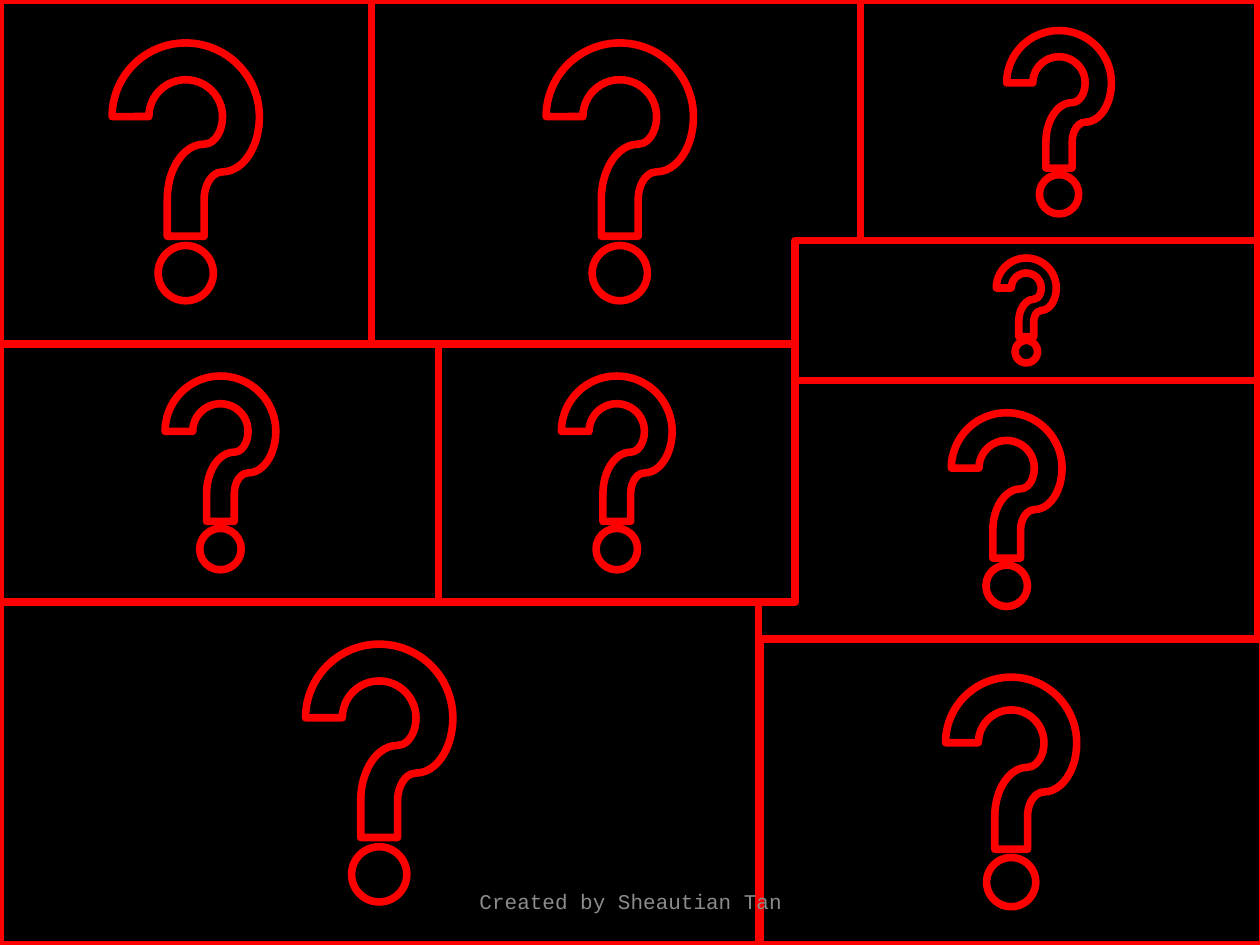
import dataclasses

import pptx
import pptx.dml.color
import pptx.enum.shapes
import pptx.enum.text
import pptx.util

Cm = pptx.util.Cm
RGB = pptx.dml.color.RGBColor


@dataclasses.dataclass(frozen=True)
class Theme:
    panel: RGB = RGB(0, 0, 0)
    outline: RGB = RGB(255, 0, 0)
    credit: RGB = RGB(0x8C, 0x8C, 0x8C)
    font: str = "Courier New"
    credit_size: float = 12
    outline_width: float = 4.33


class SlideBuilder:
    """Draw themed elements on the current slide, measured in centimetres."""

    def __init__(self, theme, slide):
        self.theme = theme
        self.slide = slide

    def question_tile(self, left, top, width, height):
        sp = self.slide.shapes.add_shape(
            pptx.enum.shapes.MSO_SHAPE.ACTION_BUTTON_HELP,
            Cm(left), Cm(top), Cm(width), Cm(height))
        sp.shadow.inherit = False
        sp.fill.solid()
        sp.fill.fore_color.rgb = self.theme.panel
        sp.line.color.rgb = self.theme.outline
        sp.line.width = pptx.util.Pt(self.theme.outline_width)

    def footer(self, text, left, top, width, height):
        sp = self.slide.shapes.add_textbox(Cm(left), Cm(top), Cm(width), Cm(height))
        tf = sp.text_frame
        tf.word_wrap = True
        tf.vertical_anchor = pptx.enum.text.MSO_ANCHOR.MIDDLE
        p = tf.paragraphs[0]
        p.text = text
        p.alignment = pptx.enum.text.PP_ALIGN.CENTER
        p.font.name = self.theme.font
        p.font.size = pptx.util.Pt(self.theme.credit_size)
        p.font.color.rgb = self.theme.credit


def main():
    prs = pptx.Presentation()
    prs.slide_width, prs.slide_height = Cm(25.4), Cm(19.05)
    s = prs.slides.add_slide(prs.slide_layouts[6])
    builder = SlideBuilder(Theme(), s)

    right = 25.35
    row_1, row_2, row_3 = 0, 6.93, 12.12
    tall, middle = 6.93, 5.21
    tiles = [
        (15.24, 7.67, right - 15.24, middle),
        (15.32, 12.88, 10.13, 6.17),
        (0, row_1, 7.49, tall),
        (0, row_3, 15.29, tall),
        (7.49, row_1, 10.01, tall),
        (0, row_2, 8.89, middle),
        (17.35, row_1, right - 17.35, 4.93),
        (8.84, row_2, 7.19, middle),
        (16.03, 4.85, right - 16.03, 2.82),
    ]
    for tile in tiles:
        builder.question_tile(*tile)
    builder.footer("Created by Sheautian Tan", 8.69, 17.65, 8.05, 1.02)

    prs.save("out.pptx")


if __name__ == "__main__":
    main()
